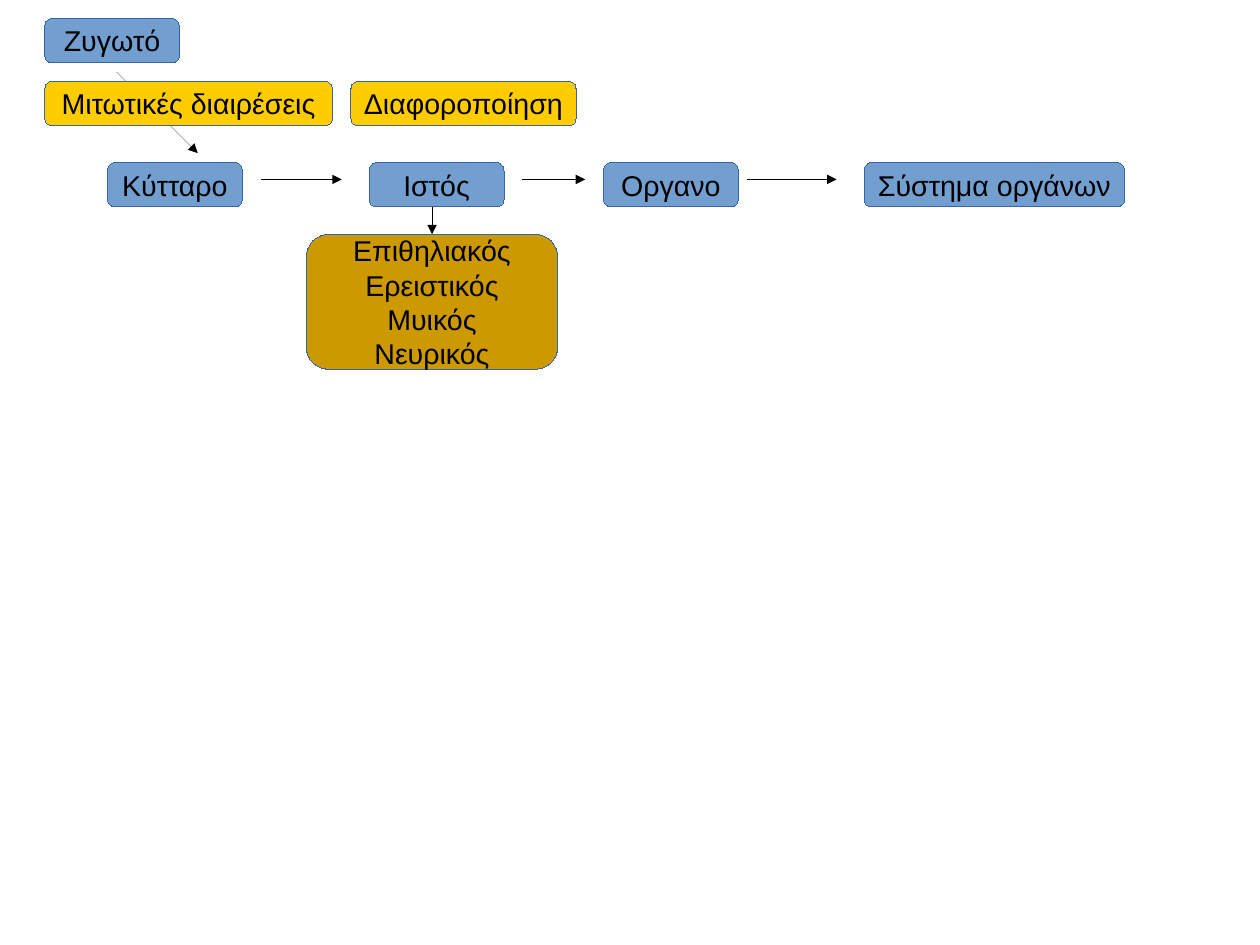
"""Builds a flow chart in Greek from the zygote to the organ systems."""
from lxml import etree
from pptx import Presentation, util as u
from pptx.dml.color import RGBColor
from pptx.enum import shapes, text
from pptx.oxml.ns import qn

BLUE, YELLOW, OCHRE = "729FCF", "FFCC00", "CC9900"
BORDER, BLACK = "3465A4", "000000"
STAGE_TOP, ROW_HEIGHT, STAGE_WIDTH = 1.42, 0.39, 1.18

deck = Presentation()
deck.slide_width, deck.slide_height = u.Cm(28), u.Cm(21)
slide = deck.slides.add_slide(deck.slide_layouts[6])


def paint(colour_format, hex_colour):
    colour_format.rgb = RGBColor.from_string(hex_colour)


def add_arrow(*ends):
    arrow = slide.shapes.add_connector(
        shapes.MSO_CONNECTOR.STRAIGHT, *[u.Inches(end) for end in ends])
    arrow._element.remove(arrow._element.find(qn("p:style")))
    paint(arrow.line.color, BLACK)
    etree.SubElement(arrow.line._get_or_add_ln(), qn("a:tailEnd"), type="triangle")
    etree.SubElement(arrow._element.spPr, qn("a:effectLst"))
    return arrow


for start, end in [(2.28, 2.99), (4.57, 5.12), (6.54, 7.32)]:
    add_arrow(start, 1.57, end, 1.57)
add_arrow(1.02, 0.63, 1.73, 1.34)

boxes = [
    (["Ζυγωτό"], 0.39, 0.16, STAGE_WIDTH, ROW_HEIGHT, BLUE),
    (["Μιτωτικές διαιρέσεις"], 0.39, 0.71, 2.52, ROW_HEIGHT, YELLOW),
    (["Διαφοροποίηση"], 3.07, 0.71, 1.97, ROW_HEIGHT, YELLOW),
    (["Κύτταρο"], 0.94, STAGE_TOP, STAGE_WIDTH, ROW_HEIGHT, BLUE),
    (["Ιστός"], 3.23, STAGE_TOP, STAGE_WIDTH, ROW_HEIGHT, BLUE),
    (["Οργανο"], 5.28, STAGE_TOP, STAGE_WIDTH, ROW_HEIGHT, BLUE),
    (["Σύστημα οργάνων"], 7.56, STAGE_TOP, 2.28, ROW_HEIGHT, BLUE),
    (["Επιθηλιακός", "Ερειστικός", "Μυικός", "Νευρικός"], 2.68, 2.05, 2.2, 1.18, OCHRE),
]
for labels, left, top, width, height, fill in boxes:
    box = slide.shapes.add_shape(
        shapes.MSO_SHAPE.ROUNDED_RECTANGLE,
        u.Inches(left), u.Inches(top), u.Inches(width), u.Inches(height))
    box._element.remove(box._element.find(qn("p:style")))
    box.shadow.inherit = False
    box.fill.solid()
    paint(box.fill.fore_color, fill)
    paint(box.line.color, BORDER)
    frame = box.text_frame
    frame.word_wrap = False
    frame.vertical_anchor = text.MSO_ANCHOR.MIDDLE
    for index, label in enumerate(labels):
        paragraph = frame.add_paragraph() if index else frame.paragraphs[0]
        paragraph.alignment = text.PP_ALIGN.CENTER
        run = paragraph.add_run()
        run.text = label
        run.font.name, run.font.size = "Arial", u.Pt(18)
        paint(run.font.color, BLACK)

tissue_types = box
add_arrow(3.78, STAGE_TOP + ROW_HEIGHT, 3.78, 2.05).end_connect(tissue_types, 0)

deck.save("out.pptx")
